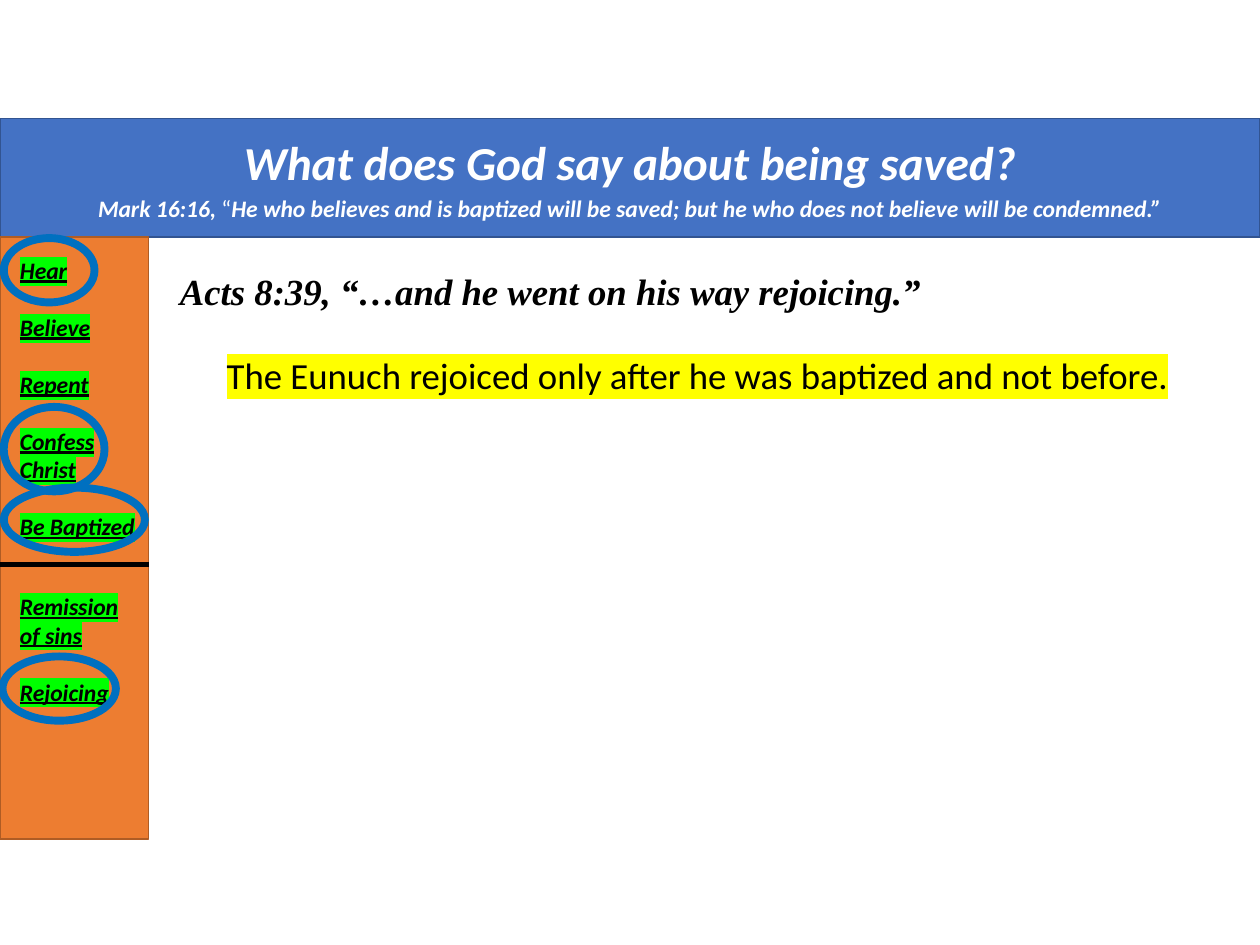
from dataclasses import dataclass

from lxml.etree import SubElement
from pptx import Presentation
from pptx.dml.color import RGBColor
from pptx.enum.shapes import MSO_CONNECTOR, MSO_SHAPE
from pptx.enum.text import MSO_ANCHOR, MSO_AUTO_SIZE, PP_ALIGN
from pptx.oxml.ns import qn
from pptx.util import Inches, Pt


@dataclass(frozen=True)
class Theme:
    black: str = "000000"
    white: str = "FFFFFF"
    banner: str = "4472C4"
    banner_edge: str = "325491"
    sidebar: str = "ED7D31"
    sidebar_edge: str = "AF5C24"
    ring: str = "0070C0"
    green: str = "00FF00"
    yellow: str = "FFFF00"
    sans: str = "Calibri"
    serif: str = "Times New Roman"
    title_size: float = 27
    body_size: float = 21
    small_size: float = 13.5


THEME = Theme()
BLANK_LINE = 16.4  # points between the steps in the sidebar


def box(*lengths):
    return [Inches(length) for length in lengths]


def style_run(run, size, color=THEME.black, font=THEME.sans, strong=False,
              underline=False, highlight=None):
    run.font.size = Pt(size)
    run.font.name = font
    run.font.bold = run.font.italic = strong
    run.font.underline = underline
    run.font.color.rgb = RGBColor.from_string(color)
    if highlight:
        properties = run._r.get_or_add_rPr()
        mark = SubElement(properties, qn("a:highlight"))
        SubElement(mark, qn("a:srgbClr")).set("val", highlight)
        properties.find(qn("a:solidFill")).addnext(mark)


def paint(shape, fill, line, width):
    if fill:
        shape.fill.solid()
        shape.fill.fore_color.rgb = RGBColor.from_string(fill)
    else:
        shape.fill.background()
    shape.line.color.rgb = RGBColor.from_string(line)
    shape.line.width = Pt(width)


def add_block(slide, kind, place, fill, line, width):
    shape = slide.shapes.add_shape(kind, *box(*place))
    shape.shadow.inherit = False
    paint(shape, fill, line, width)


def add_text(slide, place, lines, size, align=PP_ALIGN.LEFT, **style):
    """Each line is its text and the space before it in points."""
    frame = slide.shapes.add_textbox(*box(*place)).text_frame
    frame.word_wrap = True
    frame.auto_size = MSO_AUTO_SIZE.SHAPE_TO_FIT_TEXT
    frame.text = "\n".join(text for text, _ in lines)
    for paragraph, (_, gap) in zip(frame.paragraphs, lines):
        paragraph.alignment = align
        paragraph.space_before = Pt(gap)
        style_run(paragraph.runs[0], size, **style)


def add_banner(slide):
    title = slide.shapes.title
    title.left, title.top, title.width, title.height = box(0, 0.94, 10, 0.94)
    paint(title, THEME.banner, THEME.banner_edge, 1)
    frame = title.text_frame
    frame.word_wrap = True
    frame.auto_size = MSO_AUTO_SIZE.NONE
    frame.vertical_anchor = MSO_ANCHOR.MIDDLE
    frame.text = "What does God say about being saved?"
    question = frame.paragraphs[0]
    style_run(question.runs[0], THEME.title_size, THEME.white, strong=True)
    verse = frame.add_paragraph()
    verse.space_before = Pt(2.7)
    for text, strong in [
        ("Mark 16:16, ", True),
        ("“", False),
        ("He who believes and is baptized will be saved; "
         "but he who does not believe will be condemned.”", True),
    ]:
        run = verse.add_run()
        run.text = text
        style_run(run, THEME.small_size, THEME.white, strong=strong)
    for paragraph in (question, verse):
        paragraph.alignment = PP_ALIGN.CENTER


def add_divider(slide, left, right, y):
    line = slide.shapes.add_connector(MSO_CONNECTOR.STRAIGHT, *box(left, y, right, y))
    line.line.color.rgb = RGBColor.from_string(THEME.black)
    line.line.width = Pt(3)
    SubElement(line._element.spPr, qn("a:effectLst"))


def main():
    presentation = Presentation()
    presentation.slide_width, presentation.slide_height = box(10, 7.5)
    slide = presentation.slides.add_slide(presentation.slide_layouts[5])

    # Banner and main text
    add_banner(slide)
    add_text(slide, (1.33, 2.08, 8.61, 0.45),
             [("Acts 8:39, “…and he went on his way rejoicing.”", 0)],
             THEME.body_size, font=THEME.serif, strong=True)
    add_text(slide, (1.33, 2.75, 8.41, 0.45),
             [("The Eunuch rejoiced only after he was baptized and not before.", 0)],
             THEME.body_size, PP_ALIGN.CENTER, highlight=THEME.yellow)

    # Sidebar: steps above the divider, results below it
    add_block(slide, MSO_SHAPE.RECTANGLE, (0, 1.88, 1.18, 4.78),
              THEME.sidebar, THEME.sidebar_edge, 1)
    steps = [("Hear", 0), ("Believe", BLANK_LINE), ("Repent", BLANK_LINE),
             ("Confess", BLANK_LINE), ("Christ", 0), ("Be Baptized", BLANK_LINE)]
    results = [("Remission of sins", 0), ("Rejoicing", BLANK_LINE)]
    for top, height, lines in [(1.98, 2.37, steps), (4.65, 1.01, results)]:
        add_text(slide, (0.06, top, 1.12, height), lines, THEME.small_size,
                 strong=True, underline=True, highlight=THEME.green)
    add_divider(slide, 0, 1.18, 4.48)

    # Rings around the steps in the passage
    for place in [(0.03, 3.87, 1.12, 0.51), (0.03, 1.89, 0.72, 0.51),
                  (0.03, 3.23, 0.8, 0.67), (0.02, 5.21, 0.9, 0.51)]:
        add_block(slide, MSO_SHAPE.OVAL, place, None, THEME.ring, 4.5)

    presentation.save("out.pptx")


if __name__ == "__main__":
    main()
